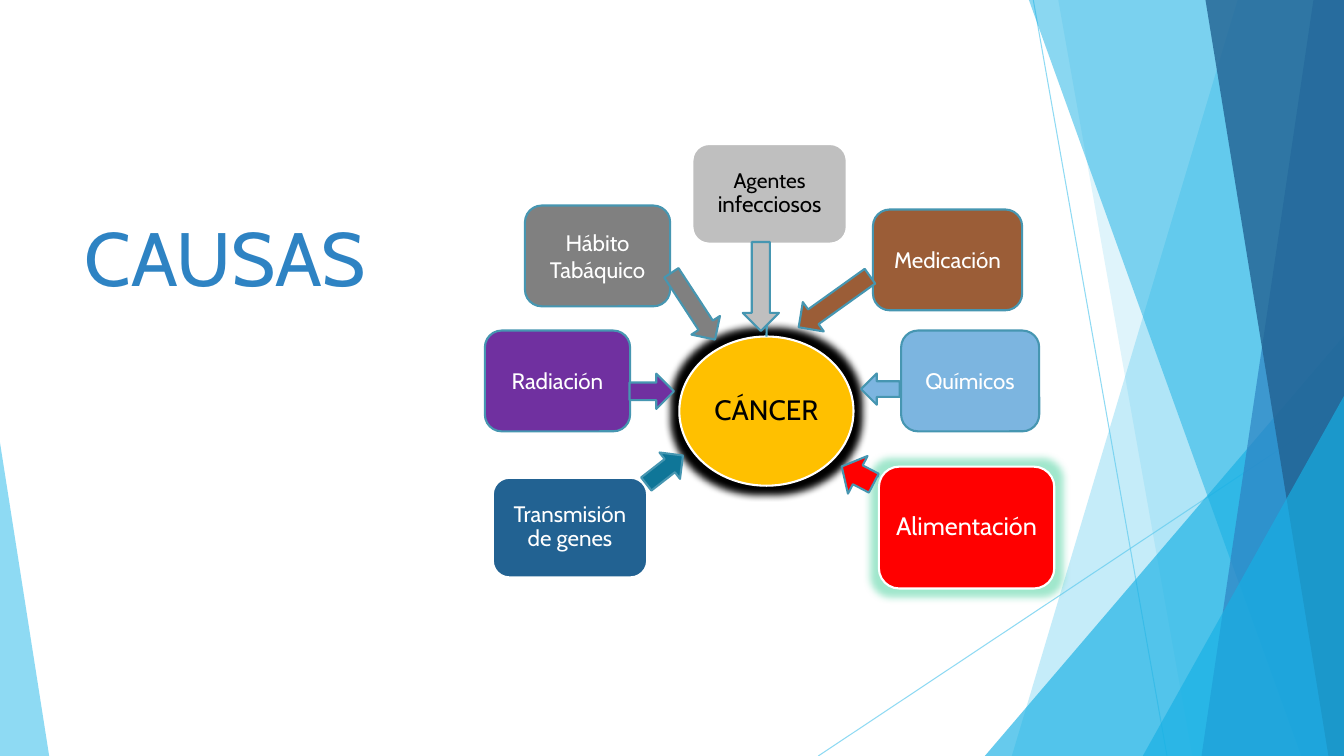
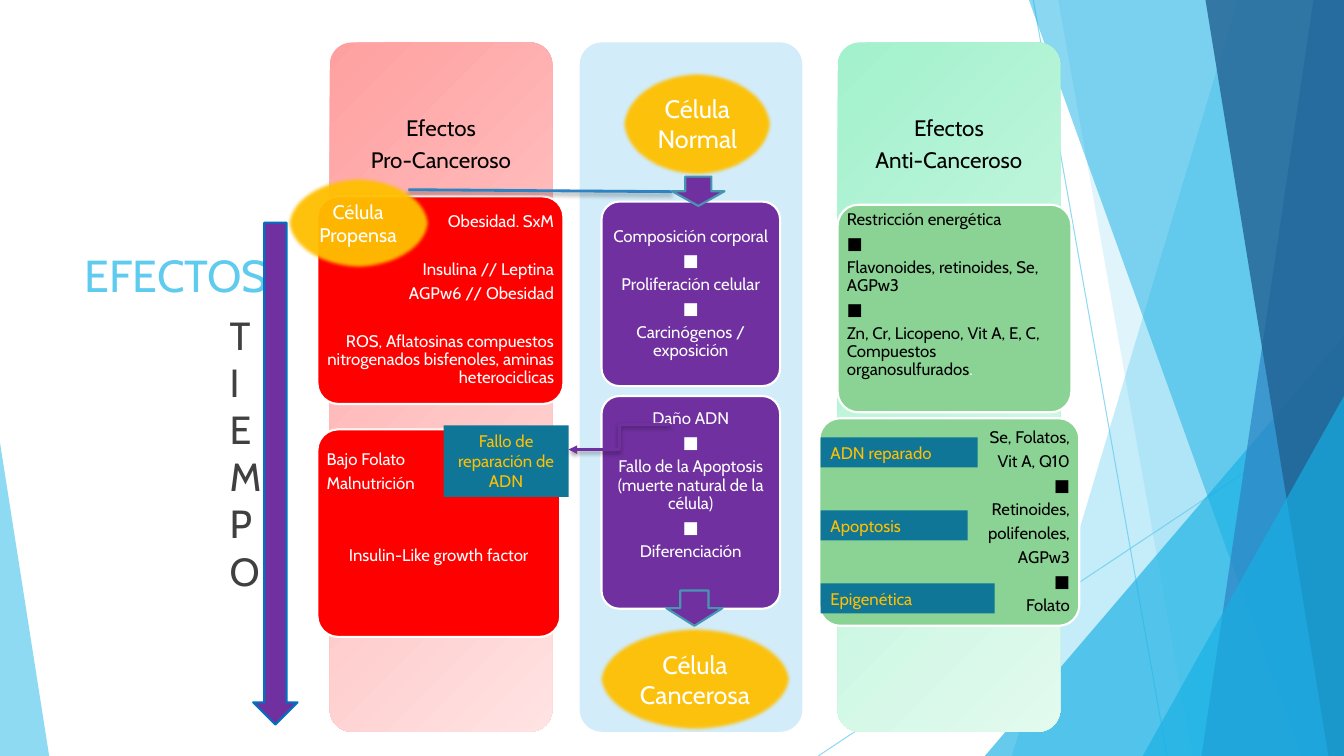
import pptx
import pptx.util
import pptx.dml.color
import pptx.enum.shapes
import pptx.enum.text
import pptx.oxml
import pptx.oxml.ns

Cm, Pt = pptx.util.Cm, pptx.util.Pt
KIND = pptx.enum.shapes.MSO_SHAPE
LINK = pptx.enum.shapes.MSO_CONNECTOR
ALIGN = pptx.enum.text.PP_ALIGN
SIDE = {"l": ALIGN.LEFT, "c": ALIGN.CENTER, "r": ALIGN.RIGHT}
ANCHOR = pptx.enum.text.MSO_ANCHOR
qn = pptx.oxml.ns.qn

FONT = "Cabin"
WIDE, HIGH = 33.87, 19.05
HEX = {
    "sky": "5FCBEF", "cyan": "17B0E4", "blue": "2E83C3", "navy": "226292",
    "teal": "0F7698", "edge": "4696B1", "link": "4CA3BF", "pale": "D2ECF9",
    "soft": "7CB5E0", "rim": "0070C0", "gold": "FFC000", "red": "FF0000",
    "plum": "7030A0", "grey": "808080", "ash": "BFBFBF", "brown": "9B5D37",
    "green": "8AD394", "white": "FFFFFF", "black": "000000", "ink": "404040",
    "mint": "42D09A", "rose": "FFA0A0", "blush": "FFE3E3",
    "leaf": "A3F1CD", "dew": "E3FAEF",
}

# Backdrop: slanted panes (top x, bottom x) and triangles (left, top, width, adj)
RAYS = [(26.04, 0, 29.41, HIGH), (WIDE, 10.24, 20.62, HIGH)]
PANES = [
    ("pane", (31.19, 25.5), "sky", 36),
    ("pane", (26.67, 30.05), "sky", 20),
    ("tri", (24.82, 8.46, 9.05, 1), "cyan", 66),
    ("pane", (25.93, 32.79), "cyan", 50),
    ("pane", (33.1, 30.28), "blue", 70),
    ("pane", (30.38, 33.48), "navy", 80),
    ("tri", (28.8, 9.98, 5.07, 1), "cyan", 66),
    ("tri", (0, 11.15, 1.24, 0), "sky", 70),
]

# Slide 1: text, place, fill, border, text colour, size, line spacing
CORE = (17.12, 8.48, 4.39, 3.76)
AGENTS = [("Agentes ", 15, "black"), ("infecciosos", 16, "black")]
CAUSES = [
    (AGENTS, (17.45, 3.63, 3.89, 2.51), "ash", "white", "black", 16, 0.9),
    ("Alimentación", (22.15, 11.76, 4.42, 3.07), "red", "white", "white", 18, 0.9),
    ("Transmisión de genes", (12.42, 12.04, 3.89, 2.51), "navy", "white", "white", 16, 0.9),
    ("Radiación", (12.22, 8.33, 3.66, 2.54), "plum", "edge", "white", 16, 1),
    ("Hábito Tabáquico", (13.23, 5.18, 3.66, 2.54), "grey", "edge", "white", 16, 1),
    ("Químicos", (22.71, 8.33, 3.48, 2.54), "soft", "edge", "white", 16, 1),
    ("Medicación", (22, 5.28, 3.76, 2.54), "brown", "edge", "white", 16, 1),
]
SPOKES = [(21.51, 11.66, 22.15, 12.01), (17.12, 11.66, 16.28, 12.17)]
ARROWS = [
    ((18.72, 6.1, 0.91, 2.24), 0, "ash"),
    ((17.04, 6.71, 0.86, 2.01), 326.8, "grey"),
    ((20.57, 6.5, 0.91, 2.21), 54.4, "brown"),
    ((21.79, 9.32, 0.79, 0.97), 90, "soft"),
    ((21.08, 11.51, 1.07, 0.91), 117.5, "red"),
    ((15.98, 9.3, 0.89, 1.12), 270, "plum"),
    ((16.33, 11.25, 0.84, 1.17), 232.1, "teal"),
]

# Slide 2: a paragraph is (text, side, space before in points)
ROW = 17.3
DOT = "■"
PILLARS = [
    (8.31, ("rose", "blush"), ["Efectos", "Pro-Canceroso"]),
    (14.61, ("pale",), []),
    (21.11, ("leaf", "dew"), ["Efectos", "Anti-Canceroso"]),
]
# place, fill, text colour, top inset (None centres), paragraphs
CELLS = [
    ((8, 4.95, 6.2, 5.23), "red", "white", None, [
        ("Obesidad. SxM", "r", 0), ("Insulina // Leptina", "r", ROW),
        ("AGPw6 // Obesidad", "r", 0),
        ("ROS, Aflatosinas compuestos nitrogenados bisfenoles, "
         "aminas heterociclicas", "r", ROW)]),
    ((8, 10.82, 6.12, 5.23), "red", "white", 0.38, [
        ("Bajo Folato", "l", 0), ("Malnutrición", "l", 0),
        ("Insulin-Like growth factor", "c", 2 * ROW)]),
    ((15.16, 5.08, 4.5, 4.65), "plum", "white", None, [
        (text, "c", 0) for text in (
            "Composición corporal", DOT, "Proliferación celular", DOT,
            "Carcinógenos / exposición")]),
    ((15.16, 9.98, 4.5, 5.36), "plum", "white", 0.23, [
        (text, "c", 0) for text in (
            "Daño ADN", DOT,
            "Fallo de la Apoptosis (muerte natural de la célula)", DOT,
            "Diferenciación")]),
    ((21.11, 5.16, 5.89, 5.23), "green", "black", 0, [
        (text, "l", 0) for text in (
            "Restricción energética", DOT,
            "Flavonoides, retinoides, Se, AGPw3", DOT,
            [("Zn, Cr, Licopeno, Vit A, E, C, Compuestos organosulfurados",
              12, "black"), (".", 12, "white")])]),
    ((20.65, 10.54, 6.55, 5.23), "green", "black", None, [
        (text, "r", 0) for text in (
            "Se, Folatos,", "Vit A, Q10", DOT, "Retinoides,",
            "polifenoles,", "AGPw3", DOT, "Folato")]),
]
OVALS = [
    ("Célula Normal", (15.67, 1.8, 3.81, 2.64), 18),
    ("Célula Propensa", (7.21, 4.45, 3.63, 2.34), 14),
    ("Célula Cancerosa", (15.09, 15.8, 4.85, 2.64), 18),
]
STEPS = [
    ((16.79, 14.88, 1.42, 0.89), "edge"),
    ((16.94, 4.45, 1.32, 0.74), "edge"),
    ((6.38, 5.61, 1.12, 12.65), "rim"),
]
FAULT = ("Fallo de reparación de ADN", (11.18, 10.72, 3.15, 1.8), "c")
TAGS = [("ADN reparado", 3.96), ("Apoptosis", 3.71), ("Epigenética", 4.39)]
LABELS = [FAULT] + [
    (text, (20.68, 11.02 + 1.84 * i, wide, 0.76), "l")
    for i, (text, wide) in enumerate(TAGS)]


def rgb(name):
    return pptx.dml.color.RGBColor.from_string(HEX[name])


def fade(shape, alpha):
    """Set the opacity, in percent, of the first colour of a shape."""
    tone = next(shape._element.spPr.iter(qn("a:srgbClr")))
    tone.append(xml(f'<a:alpha {{ns}} val="{alpha * 1000}"/>'))


def xml(text):
    return pptx.oxml.parse_xml(text.replace("{ns}", pptx.oxml.ns.nsdecls("a")))


def effect(shape, inner=""):
    """Replace the theme effects of a shape or connector."""
    props = shape._element.spPr
    for old in props.findall(qn("a:effectLst")):
        props.remove(old)
    props.append(xml(f"<a:effectLst {{ns}}>{inner}</a:effectLst>"))


def glow(shape, name, alpha):
    effect(shape, f'<a:glow rad="139700"><a:srgbClr val="{HEX[name]}">'
                  f'<a:alpha val="{alpha * 1000}"/></a:srgbClr></a:glow>')


def paint(shape, fill, edge=None):
    shape.shadow.inherit = False
    shape.fill.solid()
    shape.fill.fore_color.rgb = rgb(fill)
    if edge:
        shape.line.color.rgb = rgb(edge)
        shape.line.width = Pt(1.5)
    else:
        shape.line.fill.background()
    return shape


def form(slide, kind, place, fill, edge=None, adj=None):
    shape = slide.shapes.add_shape(kind, *map(Cm, place))
    if adj is not None:
        shape.adjustments[0] = adj
    return paint(shape, fill, edge)


def write(shape, paras, size, tone, pad=0.25, top=None, lead=1.0, after=0):
    """Fill a shape with (text, side, space before) paragraphs."""
    frame = shape.text_frame
    frame.word_wrap = True
    frame.vertical_anchor = ANCHOR.MIDDLE if top is None else ANCHOR.TOP
    frame.margin_left = frame.margin_right = Cm(pad)
    frame.margin_top = Cm(min(pad, 0.13) if top is None else top)
    frame.margin_bottom = Cm(min(pad, 0.13))
    for i, (text, side, gap) in enumerate(paras):
        para = frame.add_paragraph() if i else frame.paragraphs[0]
        para.alignment = SIDE[side]
        para.line_spacing = lead
        para.space_before, para.space_after = Pt(gap), Pt(after)
        runs = [(text, size, tone)] if isinstance(text, str) else text
        for words, points, name in runs:
            run = para.add_run()
            run.text = words
            run.font.name, run.font.size = FONT, Pt(points)
            run.font.color.rgb = rgb(name)


def join(slide, ends, name, width, kind=LINK.STRAIGHT, shade=False):
    line = slide.shapes.add_connector(kind, *map(Cm, ends))
    line.line.color.rgb = rgb(name)
    line.line.width = Pt(width)
    effect(line, '<a:outerShdw blurRad="38100" dist="25400" dir="5400000">'
                 '<a:srgbClr val="000000"><a:alpha val="35000"/></a:srgbClr>'
                 '</a:outerShdw>' if shade else "")
    return line


def start(deck, title, size, tone):
    """Add a slide with the shared backdrop and title."""
    slide = deck.slides.add_slide(deck.slide_layouts[6])
    for ends in RAYS:
        fade(join(slide, ends, "sky", 0.75), 70)
    for kind, spot, name, alpha in PANES:
        if kind == "tri":
            left, top, wide, adj = spot
            shape = form(slide, KIND.ISOSCELES_TRIANGLE,
                         (left, top, wide, HIGH - top), name, adj=adj)
        else:
            high, low = spot
            path = slide.shapes.build_freeform(Cm(high), 0)
            path.add_line_segments([(Cm(WIDE), 0), (Cm(WIDE), Cm(HIGH)),
                                    (Cm(low), Cm(HIGH))], close=True)
            shape = paint(path.convert_to_shape(), name)
        fade(shape, alpha)
    box = slide.shapes.add_textbox(*map(Cm, (1.88, 4.17, 10.72, 3.56)))
    write(box, [(title, "l", 0)], size, tone)
    box.text_frame.vertical_anchor = ANCHOR.BOTTOM
    return slide


def causes(deck):
    slide = start(deck, "CAUSAS", 54, "blue")
    core = form(slide, KIND.OVAL, CORE, "gold", "white")
    write(core, [("CÁNCER", "c", 0)], 20, "black", 0.15, lead=0.9)
    glow(core, "black", 100)
    boxes = []
    for text, place, fill, edge, tone, size, lead in CAUSES:
        box = form(slide, KIND.ROUNDED_RECTANGLE, place, fill, edge)
        write(box, [(text, "c", 0)], size, tone, 0.1, lead=lead)
        boxes.append(box)
    glow(boxes[1], "mint", 50)
    stem = join(slide, (19.35, 8.48, 19.35, 6.15), "link", 1.5)
    stem.begin_connect(core, 0)
    stem.end_connect(boxes[0], 2)
    for ends in SPOKES:
        join(slide, ends, "link", 1.5)
    for place, turn, fill in ARROWS:
        form(slide, KIND.DOWN_ARROW, place, fill, "edge").rotation = turn


def effects(deck):
    slide = start(deck, "EFECTOS", 32, "sky")
    for left, tones, head in PILLARS:
        pillar = form(slide, KIND.ROUNDED_RECTANGLE,
                      (left, 1.07, 5.61, 17.37), tones[0], adj=0.1)
        if len(tones) > 1:
            pillar.fill.gradient()
            pillar.fill.gradient_angle = 315
            for stop, name in zip(pillar.fill.gradient_stops, tones):
                stop.color.rgb = rgb(name)
        if head:
            write(pillar, [(text, "c", 0) for text in head], 16, "black",
                  0.18, 1.73, 0.9, 5.6)
    for place, fill, tone, top, paras in CELLS:
        cell = form(slide, KIND.ROUNDED_RECTANGLE, place, fill, "white", 0.1)
        write(cell, paras, 12, tone, 0.08, top, 0.9, 4.2)
    time = slide.shapes.add_textbox(*map(Cm, (5.54, 7.72, 0.74, 7.19)))
    write(time, [("TIEMPO", "c", 0)], 28, "ink", top=0.13)
    for text, place, size in OVALS:
        oval = form(slide, KIND.OVAL, place, "gold")
        fade(oval, 95)
        effect(oval, '<a:softEdge rad="31750"/>')
        write(oval, [(text, "c", 0)], size, "white")
    for text, place, side in LABELS:
        write(form(slide, KIND.RECTANGLE, place, "teal"),
              [(text, side, 0)], 12, "gold")
    bend = join(slide, (16.89, 10.69, 14.33, 11.33), "plum", 2, LINK.ELBOW, True)
    bend.line._get_or_add_ln().append(xml('<a:tailEnd {ns} type="triangle"/>'))
    join(slide, (16.94, 4.83, 10.29, 4.78), "blue", 2, shade=True)
    for place, edge in STEPS:
        form(slide, KIND.DOWN_ARROW, place, "plum", edge)


def main():
    deck = pptx.Presentation()
    deck.slide_width, deck.slide_height = Cm(WIDE), Cm(HIGH)
    causes(deck)
    effects(deck)
    deck.save("out.pptx")


if __name__ == "__main__":
    main()
